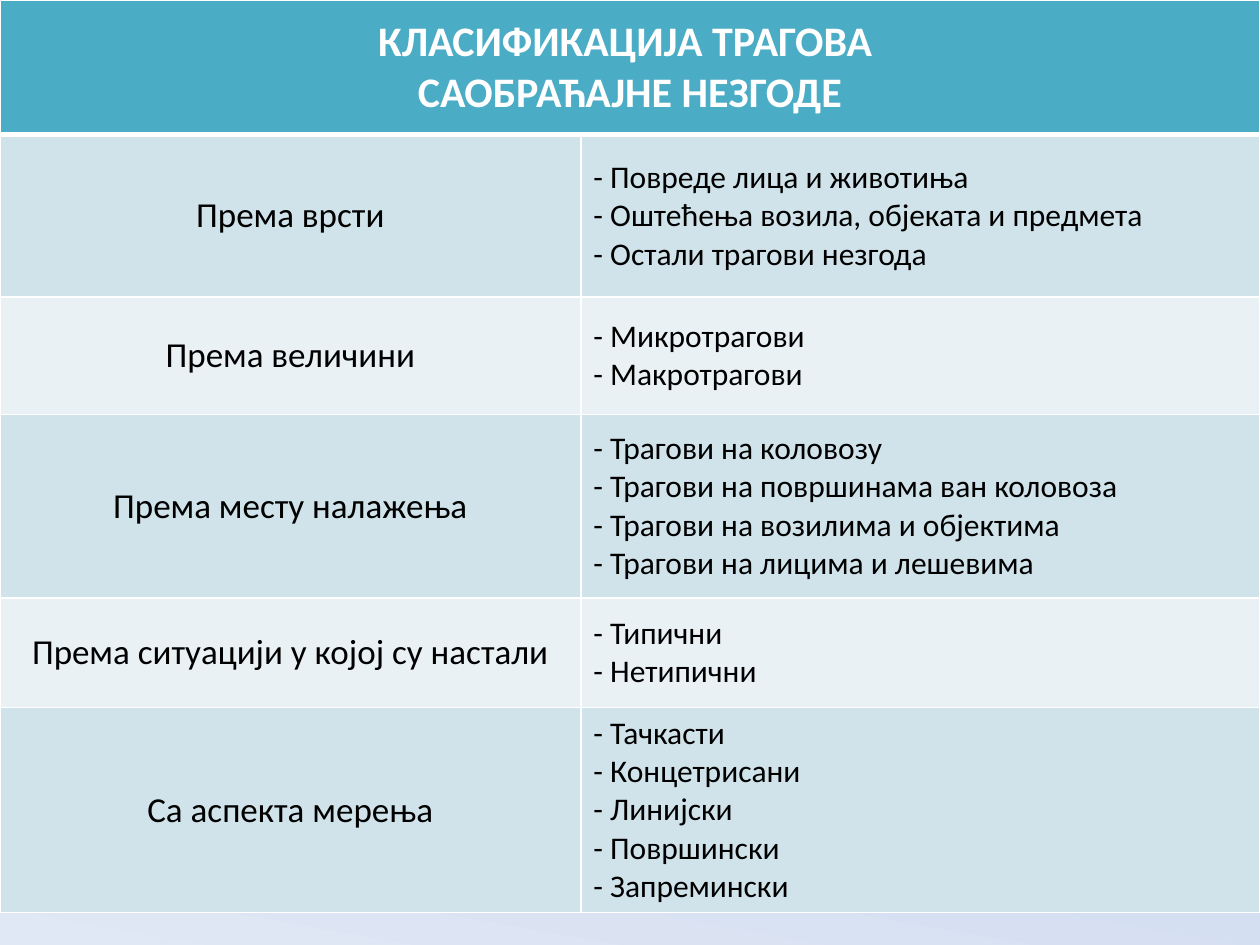
from copy import deepcopy

from lxml import etree
from pptx import Presentation
from pptx.dml.color import RGBColor
from pptx.enum.text import MSO_ANCHOR, PP_ALIGN
from pptx.oxml.ns import qn
from pptx.util import Pt

CENTER, LEFT = PP_ALIGN.CENTER, PP_ALIGN.LEFT
MIDDLE = MSO_ANCHOR.MIDDLE
FONT = "Calibri"
BLANK_LAYOUT = 6
COLORS = {
    "header": "4BACC6",
    "band_dark": "D0E3EA",
    "band_light": "E9F1F5",
    "border": "FFFFFF",
    "header_text": "FFFFFF",
    "body_text": "000000",
}
BACKGROUND_STOPS = [(0, "8EB4E3"), (0.5, "C2D1ED"), (1, "E1E8F5")]

TITLE_LINES = ["КЛАСИФИКАЦИЈА ТРАГОВА ", "САОБРАЋАЈНЕ НЕЗГОДЕ"]
# Row height, criterion, kinds of traces
CATEGORIES = [
    (92.8, "Према врсти", [
        "Повреде лица и животиња",
        "Оштећења возила, објеката и предмета",
        "Остали трагови незгода",
    ]),
    (67, "Према величини", ["Микротрагови", "Макротрагови"]),
    (105.1, "Према месту налажења", [
        "Трагови на коловозу",
        "Трагови на површинама ван коловоза",
        "Трагови на возилима и објектима",
        "Трагови на лицима и лешевима",
    ]),
    (62.6, "Према ситуацији у којој су настали", ["Типични", "Нетипични"]),
    (114.5, "Са аспекта мерења", [
        "Тачкасти", "Концетрисани", "Линијски", "Површински", "Запремински",
    ]),
]
HEADER_HEIGHT = 77
COLUMN_SHARES = (0.461, 0.539)


def paint_background(slide):
    fill = slide.background.fill
    fill.gradient()
    fill.gradient_angle = 260
    stop_list = next(slide.element.iter(qn("a:gsLst")))
    stop_list.append(deepcopy(stop_list[-1]))
    for stop, (position, color) in zip(fill.gradient_stops, BACKGROUND_STOPS):
        stop.position = position
        stop.color.rgb = RGBColor.from_string(color)


def set_borders(cell, top=1, bottom=1):
    properties = cell._tc.get_or_add_tcPr()
    for side, width in (("L", 1), ("R", 1), ("T", top), ("B", bottom)):
        line = etree.SubElement(properties, qn(f"a:ln{side}"), w=str(Pt(width)))
        solid = etree.SubElement(line, qn("a:solidFill"))
        etree.SubElement(solid, qn("a:srgbClr"), val=COLORS["border"])


def write_cell(cell, lines, size, fill, color="body_text", bold=False, align=CENTER):
    cell.fill.solid()
    cell.fill.fore_color.rgb = RGBColor.from_string(COLORS[fill])
    cell.vertical_anchor = MIDDLE
    frame = cell.text_frame
    for index, text in enumerate(lines):
        paragraph = frame.add_paragraph() if index else frame.paragraphs[0]
        paragraph.alignment = align
        run = paragraph.add_run()
        run.text = text
        run.font.name = FONT
        run.font.size = Pt(size)
        run.font.bold = bold
        run.font.color.rgb = RGBColor.from_string(COLORS[color])


def add_classification_table(slide, left, top, width):
    heights = [HEADER_HEIGHT] + [category[0] for category in CATEGORIES]
    frame = slide.shapes.add_table(
        len(heights), len(COLUMN_SHARES),
        Pt(left), Pt(top), Pt(width), Pt(sum(heights)))
    table = frame.table
    for column, share in zip(table.columns, COLUMN_SHARES):
        column.width = Pt(width * share)
    for row, height in zip(table.rows, heights):
        row.height = Pt(height)

    # Header across both columns, with a thick line below it
    header = table.cell(0, 0)
    header.merge(table.cell(0, 1))
    for cell in table.rows[0].cells:
        set_borders(cell, bottom=3)
    write_cell(header, TITLE_LINES, 24, "header", "header_text", bold=True)

    # Banded category rows
    for index, (_, criterion, kinds) in enumerate(CATEGORIES, start=1):
        band = "band_dark" if index % 2 else "band_light"
        criterion_cell, kinds_cell = table.rows[index].cells
        for cell in (criterion_cell, kinds_cell):
            set_borders(cell, top=3 if index == 1 else 1)
        write_cell(criterion_cell, [criterion], 20, band)
        write_cell(kinds_cell, [f"- {kind}" for kind in kinds], 18, band, align=LEFT)


def main():
    presentation = Presentation()
    presentation.slide_width = Pt(720)
    presentation.slide_height = Pt(540)
    slide = presentation.slides.add_slide(presentation.slide_layouts[BLANK_LAYOUT])
    paint_background(slide)
    add_classification_table(slide, left=0, top=0, width=720)
    presentation.save("out.pptx")


if __name__ == "__main__":
    main()
